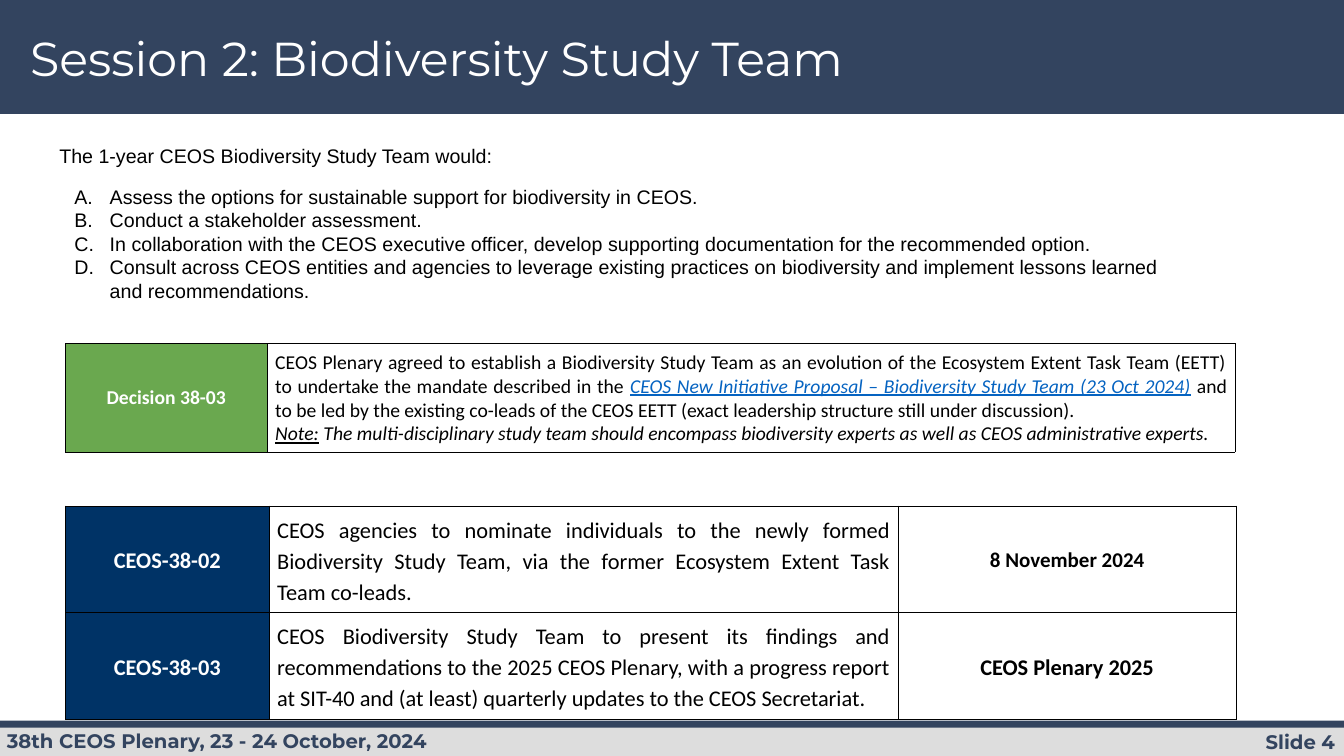
"""Build the Biodiversity Study Team slide with its decision and action tables."""
from dataclasses import dataclass

from lxml.etree import SubElement
from pptx import Presentation
from pptx.dml.color import RGBColor
from pptx.enum.shapes import MSO_SHAPE as Shape
from pptx.enum.text import MSO_ANCHOR as Anchor, PP_ALIGN as Align
from pptx.oxml import parse_xml
from pptx.oxml.ns import nsdecls, qn
from pptx.util import Inches, Pt


@dataclass(frozen=True)
class Theme:
    """Colours, fonts and type sizes of the slide."""
    slate: str = "33445F"
    grey: str = "DDDDDD"
    navy: str = "003366"
    green: str = "6AA84F"
    link: str = "0563C1"
    black: str = "000000"
    white: str = "FFFFFF"
    display: str = "Montserrat"
    body: str = "Arial"
    table: str = "Calibri"
    title_size: int = 34
    action_size: int = 16
    date_size: int = 15
    text_size: int = 14


THEME = Theme()
MANDATES = [
    "Assess the options for sustainable support for biodiversity in CEOS.",
    "Conduct a stakeholder assessment.",
    "In collaboration with the CEOS executive officer, develop supporting "
    "documentation for the recommended option.",
    "Consult across CEOS entities and agencies to leverage existing practices on "
    "biodiversity and implement lessons learned and recommendations.",
]
DECISION = [
    [("CEOS Plenary agreed to establish a Biodiversity Study Team as an evolution of "
      "the Ecosystem Extent Task Team (EETT) to undertake the mandate described in the ", {}),
     ("CEOS New Initiative Proposal – Biodiversity Study Team (23 Oct 2024)",
      {"color": THEME.link, "italic": True, "underline": True}),
     (" and to be led by the existing co-leads of the CEOS EETT (exact leadership "
      "structure still under discussion).", {})],
    [("Note:", {"italic": True, "underline": True}),
     (" The multi-disciplinary study team should encompass biodiversity experts as "
      "well as CEOS administrative experts.", {"italic": True})],
]
ACTIONS = [
    ("CEOS-38-02",
     "CEOS agencies to nominate individuals to the newly formed Biodiversity Study "
     "Team, via the former Ecosystem Extent Task Team co-leads.",
     "8 November 2024", THEME.date_size),
    ("CEOS-38-03",
     "CEOS Biodiversity Study Team to present its findings and recommendations to the "
     "2025 CEOS Plenary, with a progress report at SIT-40 and (at least) quarterly "
     "updates to the CEOS Secretariat.",
     "CEOS Plenary 2025", THEME.action_size),
]


def write(paragraph, text, *, size, font, color=THEME.black, bold=False, italic=False,
          underline=False, align=Align.LEFT, line_spacing=None, before=0):
    """Append one formatted run and set its paragraph's layout."""
    paragraph.alignment = align
    paragraph.line_spacing = line_spacing
    paragraph.space_before = Pt(before)
    run = paragraph.add_run()
    run.text = text
    run.font.size, run.font.name = Pt(size), font
    run.font.bold, run.font.italic, run.font.underline = bold, italic, underline
    run.font.color.rgb = RGBColor.from_string(color)


def add_band(slide, left, top, width, height, color):
    """Draw a plain filled band."""
    band = slide.shapes.add_shape(
        Shape.RECTANGLE, Inches(left), Inches(top), Inches(width), Inches(height))
    band.shadow.inherit = False
    band.fill.solid()
    band.fill.fore_color.rgb = RGBColor.from_string(color)
    band.line.fill.background()


def add_frame(slide, left, top, width, height, inset=0.05):
    """Add a wrapping text box and return its text frame."""
    frame = slide.shapes.add_textbox(
        Inches(left), Inches(top), Inches(width), Inches(height)).text_frame
    frame.word_wrap = True
    frame.margin_left = frame.margin_right = Inches(0.1)
    frame.margin_top = frame.margin_bottom = Inches(inset)
    return frame


def add_letter(paragraph):
    """Number a paragraph with a capital letter and a hanging indent."""
    layout = paragraph._p.get_or_add_pPr()
    layout.set("marL", str(Inches(0.5)))
    layout.set("indent", str(Inches(-0.35)))
    colour = SubElement(SubElement(layout, qn("a:buClr")), qn("a:srgbClr"))
    colour.set("val", THEME.black)
    SubElement(layout, qn("a:buFont")).set("typeface", THEME.body)
    SubElement(layout, qn("a:buAutoNum")).set("type", "alphaUcPeriod")


def add_grid(slide, left, top, widths, heights):
    """Add an unstyled table with the given column widths and row heights."""
    grid = slide.shapes.add_table(
        len(heights), len(widths), Inches(left), Inches(top),
        Inches(sum(widths)), Inches(sum(heights))).table
    grid.first_row = grid.horz_banding = False
    for column, width in zip(grid.columns, widths):
        column.width = Inches(width)
    for row, height in zip(grid.rows, heights):
        row.height = Inches(height)
    return grid


def fill_cell(cell, paragraphs, fill=None, **style):
    """Fill, border and write a cell from paragraphs of (text, format) runs."""
    cell.vertical_anchor = Anchor.MIDDLE
    cell.margin_left = cell.margin_right = Inches(0.08)
    cell.margin_top = cell.margin_bottom = Inches(0.07)
    if fill:
        cell.fill.solid()
        cell.fill.fore_color.rgb = RGBColor.from_string(fill)
    else:
        cell.fill.background()
    for index, side in enumerate("LRTB"):
        cell._tc.get_or_add_tcPr().insert(index, parse_xml(
            f'<a:ln{side} {nsdecls("a")} w="{Pt(0.5)}"><a:solidFill>'
            f'<a:srgbClr val="{THEME.black}"/></a:solidFill></a:ln{side}>'))
    frame = cell.text_frame
    for index, runs in enumerate(paragraphs):
        paragraph = frame.add_paragraph() if index else frame.paragraphs[0]
        for text, changes in runs:
            write(paragraph, text, **{"font": THEME.table, **style, **changes})


def add_page_frame(slide):
    """Add the title band, the footer and their texts."""
    add_band(slide, 0, 0, 13.33, 1.13, THEME.slate)
    add_band(slide, 0, 7.19, 13.33, 0.31, THEME.grey)
    add_band(slide, 0, 7.15, 13.33, 0.07, THEME.slate)
    footer = {"size": THEME.text_size, "font": THEME.display,
              "color": THEME.slate, "bold": True}
    write(add_frame(slide, 11.23, 7.19, 2.11, 0.34).paragraphs[0],
          "Slide 4", align=Align.RIGHT, **footer)
    write(add_frame(slide, -0.03, 7.18, 6.43, 0.34).paragraphs[0],
          "38th CEOS Plenary, 23 - 24 October, 2024", **footer)
    write(add_frame(slide, 0.2, 0.24, 9.48, 0.67).paragraphs[0],
          "Session 2: Biodiversity Study Team",
          size=THEME.title_size, font=THEME.display, color=THEME.white)


def add_mandate(slide):
    """Add the lettered mandate of the study team."""
    mandate = add_frame(slide, 0.49, 1.33, 11.3, 1.78, inset=0.1)
    style = {"size": THEME.text_size, "font": THEME.body}
    write(mandate.paragraphs[0], "The 1-year CEOS Biodiversity Study Team would:", **style)
    for index, task in enumerate(MANDATES):
        item = mandate.add_paragraph()
        add_letter(item)
        write(item, task, before=0 if index else 12, **style)


def add_actions(slide):
    """Add the table of actions and due dates."""
    grid = add_grid(slide, 0.65, 5.02, [2.02, 6.24, 3.35], [1.04, 1.07])
    for row, (code, action, due, due_size) in enumerate(ACTIONS):
        fill_cell(grid.cell(row, 0), [[(code, {})]], fill=THEME.navy, color=THEME.white,
                  size=THEME.action_size, bold=True, align=Align.CENTER, line_spacing=1.14)
        fill_cell(grid.cell(row, 1), [[(action, {})]], size=THEME.action_size,
                  align=Align.JUSTIFY, line_spacing=1.14)
        fill_cell(grid.cell(row, 2), [[(due, {})]], size=due_size, bold=True,
                  align=Align.CENTER, line_spacing=1.14)


def add_decision(slide):
    """Add the one-row decision table."""
    grid = add_grid(slide, 0.65, 3.41, [2, 9.6], [1.07])
    fill_cell(grid.cell(0, 0), [[("Decision 38-03", {})]], fill=THEME.green,
              color=THEME.white, size=THEME.text_size, bold=True, align=Align.CENTER)
    fill_cell(grid.cell(0, 1), DECISION, size=THEME.text_size, align=Align.JUSTIFY)


def main():
    """Build and save the slide."""
    deck = Presentation()
    deck.slide_width, deck.slide_height = Inches(13.33), Inches(7.5)
    slide = deck.slides.add_slide(deck.slide_layouts[6])
    add_page_frame(slide)
    add_actions(slide)
    add_decision(slide)
    add_mandate(slide)
    deck.save("out.pptx")


if __name__ == "__main__":
    main()
